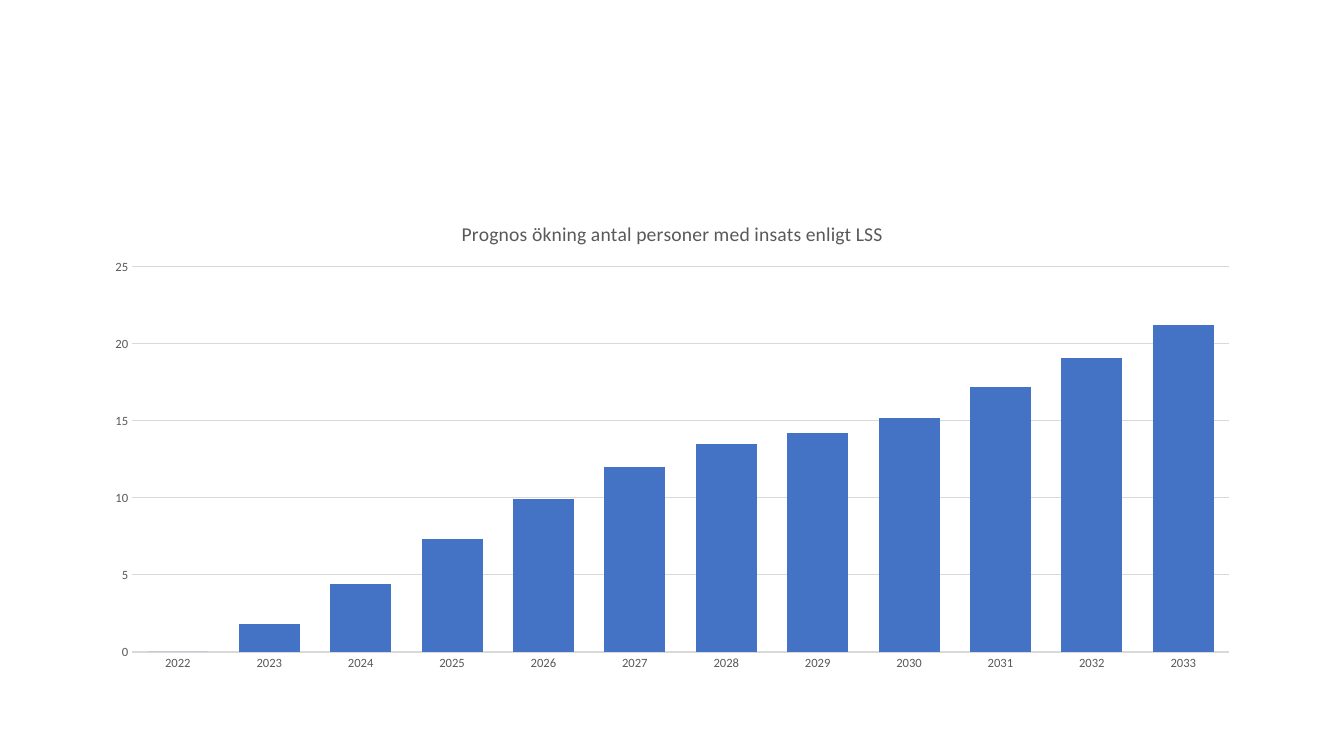
from typing import NamedTuple

import pptx
import pptx.chart.axis
import pptx.chart.chart
import pptx.chart.data
import pptx.dml.color
import pptx.dml.line
import pptx.enum.chart
import pptx.oxml
import pptx.oxml.ns
import pptx.text.text
import pptx.util
from pptx.util import Inches

BAR_BLUE = pptx.dml.color.RGBColor(0x44, 0x72, 0xC4)
TEXT_GRAY = pptx.dml.color.RGBColor(0x59, 0x59, 0x59)
LINE_GRAY = pptx.dml.color.RGBColor(0xD9, 0xD9, 0xD9)
FONT_NAME = "Calibri"
TITLE = "Prognos ökning antal personer med insats enligt LSS"
FIRST_YEAR = 2022
INCREASES = (0, 1.8, 4.4, 7.3, 9.9, 12, 13.5, 14.2, 15.2, 17.2, 19.1, 21.2)


class PlotArea(NamedTuple):
    x: float
    y: float
    w: float
    h: float


PLOT_AREA = PlotArea(x=0.034, y=0.136, w=0.946, h=0.803)


def style_font(font: pptx.text.text.Font, size: float) -> None:
    font.name = FONT_NAME
    font.size = pptx.util.Pt(size)
    font.bold = False
    font.color.rgb = TEXT_GRAY


def style_line(line: pptx.dml.line.LineFormat) -> None:
    line.color.rgb = LINE_GRAY
    line.width = pptx.util.Pt(0.75)


def style_axis(axis: pptx.chart.axis.CategoryAxis | pptx.chart.axis.ValueAxis) -> None:
    axis.major_tick_mark = pptx.enum.chart.XL_TICK_MARK.NONE
    axis.minor_tick_mark = pptx.enum.chart.XL_TICK_MARK.NONE
    style_font(axis.tick_labels.font, 9)


def place_plot(chart: pptx.chart.chart.Chart, area: PlotArea) -> None:
    plot_area = chart.plots[0]._element.getparent()
    for old_layout in plot_area.findall(pptx.oxml.ns.qn("c:layout")):
        plot_area.remove(old_layout)
    values = "".join(f'<c:{key} val="{value}"/>' for key, value in area._asdict().items())
    layout = pptx.oxml.parse_xml(
        f'<c:layout {pptx.oxml.ns.nsdecls("c")}><c:manualLayout>'
        '<c:layoutTarget val="inner"/><c:xMode val="edge"/><c:yMode val="edge"/>'
        f"{values}</c:manualLayout></c:layout>"
    )
    plot_area.insert(0, layout)


def add_forecast(page: pptx.slide.Slide) -> None:
    data = pptx.chart.data.CategoryChartData(number_format="0")
    data.categories = [str(FIRST_YEAR + offset) for offset in range(len(INCREASES))]
    data.add_series("Series 1", INCREASES)
    chart = page.shapes.add_chart(
        pptx.enum.chart.XL_CHART_TYPE.COLUMN_STACKED,
        Inches(0.92), Inches(2), Inches(11.5), Inches(4.76), data,
    ).chart
    style_font(chart.font, 10)
    chart.has_legend = False
    chart.has_title = True
    chart.chart_title.include_in_layout = False
    heading = chart.chart_title.text_frame
    heading.text = TITLE
    style_font(heading.paragraphs[0].font, 14)

    style_axis(chart.category_axis)
    style_line(chart.category_axis.format.line)
    value_axis = chart.value_axis
    style_axis(value_axis)
    value_axis.minimum_scale = 0
    value_axis.maximum_scale = 25
    value_axis.major_unit = 5
    value_axis.tick_labels.number_format = "0"
    value_axis.tick_labels.number_format_is_linked = False
    value_axis.format.line.fill.background()
    style_line(value_axis.major_gridlines.format.line)

    plot = chart.plots[0]
    plot.gap_width = 50
    plot.overlap = 100
    plot.vary_by_categories = False
    bars = plot.series[0].format
    bars.fill.solid()
    bars.fill.fore_color.rgb = BAR_BLUE
    bars.line.fill.background()
    place_plot(chart, PLOT_AREA)


def main() -> None:
    deck = pptx.Presentation()
    deck.slide_width = Inches(13.33)
    deck.slide_height = Inches(7.5)
    add_forecast(deck.slides.add_slide(deck.slide_layouts[6]))
    deck.save("out.pptx")


if __name__ == "__main__":
    main()
